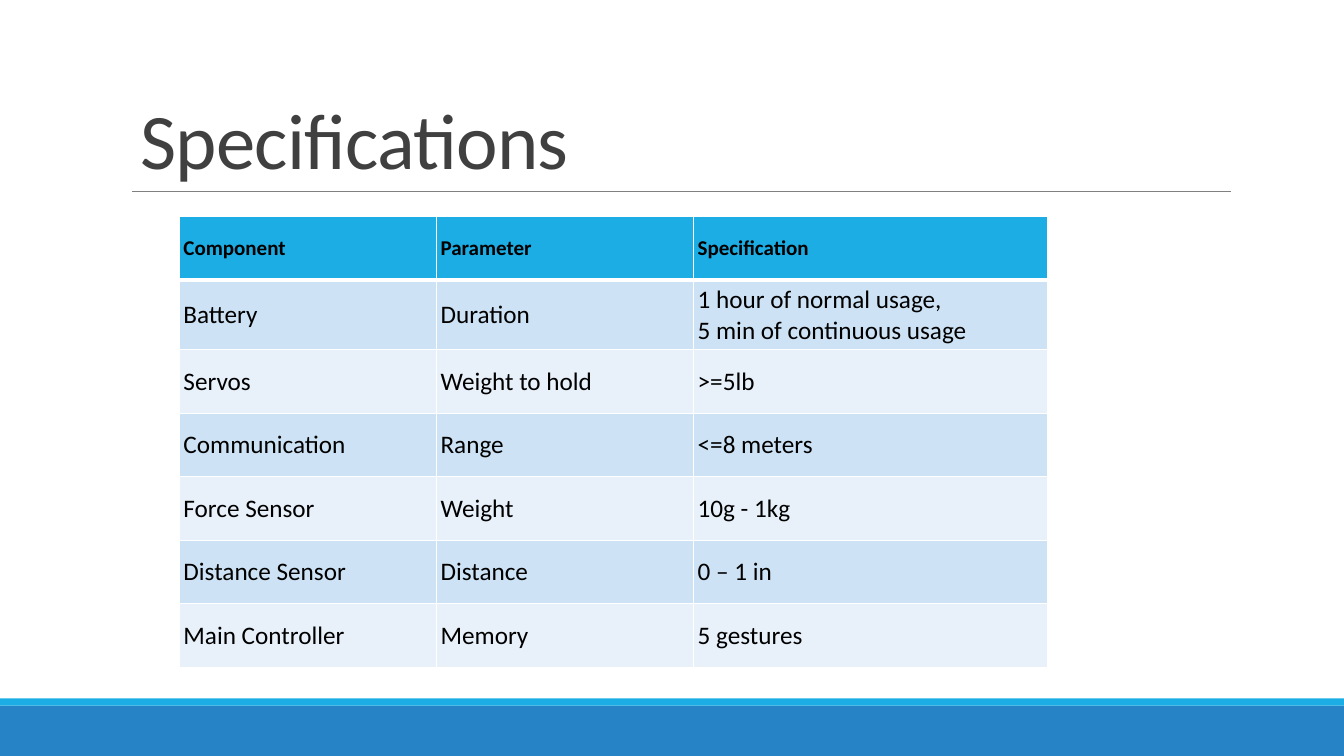
from lxml.etree import SubElement
from pptx import Presentation
from pptx.dml.color import RGBColor
from pptx.enum.shapes import MSO_CONNECTOR, MSO_SHAPE
from pptx.enum.text import MSO_ANCHOR, MSO_AUTO_SIZE, PP_ALIGN
from pptx.oxml.ns import qn
from pptx.util import Inches, Pt

BLUE = RGBColor(0x26, 0x83, 0xC6)
CYAN = RGBColor(0x1C, 0xAD, 0xE4)
BAND_DARK = RGBColor(0xCD, 0xE3, 0xF5)
BAND_LIGHT = RGBColor(0xE8, 0xF1, 0xFA)
GRAY = RGBColor(0x80, 0x80, 0x80)
TITLE_GRAY = RGBColor(0x40, 0x40, 0x40)
BLACK = RGBColor(0, 0, 0)
WHITE = RGBColor(0xFF, 0xFF, 0xFF)
FONT = "Calibri"

SPECS = [
    ("Component", "Parameter", "Specification"),
    ("Battery", "Duration", "1 hour of normal usage,\n5 min of continuous usage"),
    ("Servos", "Weight to hold", ">=5lb"),
    ("Communication", "Range", "<=8 meters"),
    ("Force Sensor", "Weight", "10g - 1kg"),
    ("Distance Sensor", "Distance", "0 – 1 in"),
    ("Main Controller", "Memory", "5 gestures"),
]
COL_WIDTHS = (2.55, 2.55, 3.51)
ROW_HEIGHT = 0.63


def style_font(font, size, color, bold=False):
    font.name = FONT
    font.size = Pt(size)
    font.bold = bold
    font.color.rgb = color


def add_borders(cell, bottom_width):
    """Draw white borders of 1 pt, with the given width at the bottom."""
    tcPr = cell._tc.get_or_add_tcPr()
    widths = {"a:lnL": 1, "a:lnR": 1, "a:lnT": 1, "a:lnB": bottom_width}
    for i, (side, width) in enumerate(widths.items()):
        ln = SubElement(tcPr, qn(side), w=str(Pt(width)))
        fill = SubElement(ln, qn("a:solidFill"))
        SubElement(fill, qn("a:srgbClr"), val=str(WHITE))
        tcPr.insert(i, ln)  # borders come before the cell fill


prs = Presentation()
prs.slide_width = Inches(13.33)
prs.slide_height = Inches(7.5)
s = prs.slides.add_slide(prs.slide_layouts[5])

# Footer bars
for top, height, color in ((7, 0.5, BLUE), (6.93, 0.07, CYAN)):
    bar = s.shapes.add_shape(MSO_SHAPE.RECTANGLE, 0, Inches(top), prs.slide_width, Inches(height))
    bar.shadow.inherit = False
    bar.fill.solid()
    bar.fill.fore_color.rgb = color
    bar.line.fill.background()

# Title and rule
title = s.shapes.title
title.left, title.top = Inches(1.29), Inches(0.23)
title.width, title.height = Inches(8.54), Inches(1.66)
tf = title.text_frame
tf.text = "Specifications"
tf.word_wrap = True
tf.auto_size = MSO_AUTO_SIZE.NONE
tf.vertical_anchor = MSO_ANCHOR.BOTTOM
p = tf.paragraphs[0]
p.alignment = PP_ALIGN.LEFT
p.line_spacing = 0.85
r = p.runs[0]
style_font(r.font, 56.2, TITLE_GRAY)
r.font._element.set("spc", "-50")

rule = s.shapes.add_connector(
    MSO_CONNECTOR.STRAIGHT, Inches(1.31), Inches(1.9), Inches(12.21), Inches(1.9))
rule.line.color.rgb = GRAY
rule.line.width = Pt(0.5)
SubElement(rule._element.spPr, qn("a:effectLst"))

# Specification table
table = s.shapes.add_table(
    len(SPECS), len(COL_WIDTHS), Inches(1.78), Inches(2.15),
    Inches(sum(COL_WIDTHS)), Inches(ROW_HEIGHT * len(SPECS))).table
for column, width in zip(table.columns, COL_WIDTHS):
    column.width = Inches(width)
for i, texts in enumerate(SPECS):
    header = i == 0
    table.rows[i].height = Inches(ROW_HEIGHT)
    for cell, text in zip(table.rows[i].cells, texts):
        cell.text = text
        cell.vertical_anchor = MSO_ANCHOR.MIDDLE
        cell.margin_left = cell.margin_right = Inches(0.04)
        cell.margin_top = cell.margin_bottom = Inches(0.04)
        cell.fill.solid()
        cell.fill.fore_color.rgb = CYAN if header else (BAND_DARK if i % 2 else BAND_LIGHT)
        add_borders(cell, 3 if header else 1)
        for p in cell.text_frame.paragraphs:
            for r in p.runs:
                style_font(r.font, 15 if header else 18, BLACK, header)

prs.save("out.pptx")
